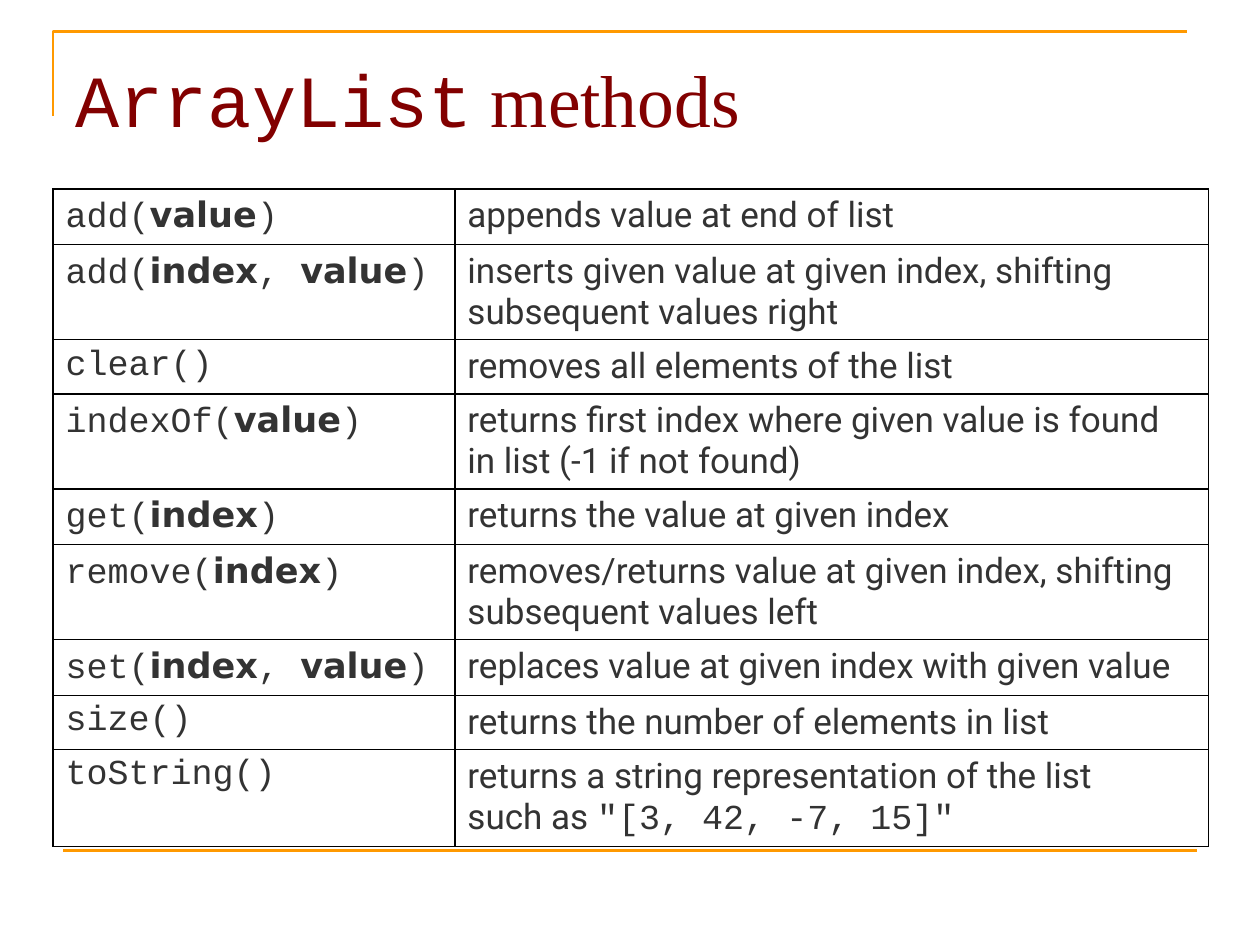
from lxml import etree
from pptx import Presentation
from pptx.dml.color import RGBColor
from pptx.enum.shapes import MSO_CONNECTOR
from pptx.enum.text import MSO_ANCHOR, MSO_AUTO_SIZE, PP_ALIGN
from pptx.oxml.ns import qn
from pptx.util import Inches, Pt

STRAIGHT = MSO_CONNECTOR.STRAIGHT
MIDDLE, TOP = MSO_ANCHOR.MIDDLE, MSO_ANCHOR.TOP
LEFT = PP_ALIGN.LEFT
NO_FIT = MSO_AUTO_SIZE.NONE

ORANGE, MAROON, DARK, BLACK = "FF9900", "820000", "333333", "000000"
CODE = {"name": "Courier New", "bold": False}
ARG = {"name": "DejaVu Sans", "bold": True}
PROSE = {"name": "Roboto", "bold": False}
SERIF = {"name": "Times New Roman", "bold": False}

COL_WIDTHS = [3.19, 5.98]
ONE_LINE, TWO_LINES = 0.43, 0.75
METHODS = [
    ("add(*value*)", "appends value at end of list", ONE_LINE),
    ("add(*index*, *value*)",
     "inserts given value at given index, shifting subsequent values right", TWO_LINES),
    ("clear()", "removes all elements of the list", ONE_LINE),
    ("indexOf(*value*)",
     "returns first index where given value is found in list (-1 if not found)", TWO_LINES),
    ("get(*index*)", "returns the value at given index", ONE_LINE),
    ("remove(*index*)",
     "removes/returns value at given index, shifting subsequent values left", TWO_LINES),
    ("set(*index*, *value*)", "replaces value at given index with given value", ONE_LINE),
    ("size()", "returns the number of elements in list", ONE_LINE),
    ("toString()",
     'returns a string representation of the list\nsuch as *"[3, 42, -7, 15]"*', TWO_LINES),
]


def rgb(value):
    return RGBColor.from_string(value)


def set_attrs(obj, values):
    for name, value in values.items():
        setattr(obj, name, value)


def write_text(tf, text, fonts, size, color):
    for i, line in enumerate(text.split("\n")):
        p = tf.paragraphs[0] if i == 0 else tf.add_paragraph()
        p.alignment = LEFT
        for j, part in enumerate(line.split("*")):
            if part:
                r = p.add_run()
                r.text = part
                set_attrs(r.font, {**fonts[j % 2], "size": Pt(size)})
                r.font.color.rgb = rgb(color)


def add_title(s, text):
    sp = s.shapes.title
    set_attrs(sp, {"left": Inches(0.5), "top": Inches(0.3),
                   "width": Inches(9), "height": Inches(1.03)})
    set_attrs(sp.text_frame, {"vertical_anchor": MIDDLE, "auto_size": NO_FIT,
                              "word_wrap": True, "margin_bottom": Inches(0.13)})
    write_text(sp.text_frame, text, (CODE, SERIF), 42, MAROON)


def style_line(sp):
    sp.line.color.rgb = rgb(ORANGE)
    sp.line.width = Pt(1.5)


def add_corner(s):
    builder = s.shapes.build_freeform(Inches(0.42), Inches(0.92))
    builder.add_line_segments(
        [(Inches(0.42), Inches(0.25)), (Inches(9.42), Inches(0.25))], close=False)
    sp = builder.convert_to_shape()
    sp.shadow.inherit = False
    sp.fill.background()
    style_line(sp)


def add_rule(s, x1, x2, y):
    sp = s.shapes.add_connector(STRAIGHT, Inches(x1), Inches(y), Inches(x2), Inches(y))
    style_line(sp)
    etree.SubElement(sp._element.spPr, qn("a:effectLst"))


def add_borders(cell, color, width):
    tc_pr = cell._tc.get_or_add_tcPr()
    for i, side in enumerate(("lnL", "lnR", "lnT", "lnB")):
        ln = etree.Element(qn(f"a:{side}"), w=str(Pt(width)))
        fill = etree.SubElement(ln, qn("a:solidFill"))
        etree.SubElement(fill, qn("a:srgbClr"), val=color)
        tc_pr.insert(i, ln)


def add_method_table(s):
    heights = [row[2] for row in METHODS]
    frame = s.shapes.add_table(len(METHODS), len(COL_WIDTHS), Inches(0.42), Inches(1.5),
                               Inches(sum(COL_WIDTHS)), Inches(sum(heights)))
    table = frame.table
    set_attrs(table, {"first_row": False, "horz_banding": False})
    for col, width in zip(table.columns, COL_WIDTHS):
        col.width = Inches(width)
    for row, (call, meaning, height) in zip(table.rows, METHODS):
        row.height = Inches(height)
        for cell, text, fonts in zip(row.cells, (call, meaning), ((CODE, ARG), (PROSE, CODE))):
            cell.fill.background()
            cell.vertical_anchor = TOP
            add_borders(cell, BLACK, 1)
            write_text(cell.text_frame, text, fonts, 20, DARK)


def main():
    prs = Presentation()
    set_attrs(prs, {"slide_width": Inches(10), "slide_height": Inches(7.5)})
    s = prs.slides.add_slide(prs.slide_layouts[5])
    add_corner(s)
    add_rule(s, 0.5, 9.5, 6.75)
    add_title(s, "ArrayList* methods")
    add_method_table(s)
    prs.save("out.pptx")


if __name__ == "__main__":
    main()
